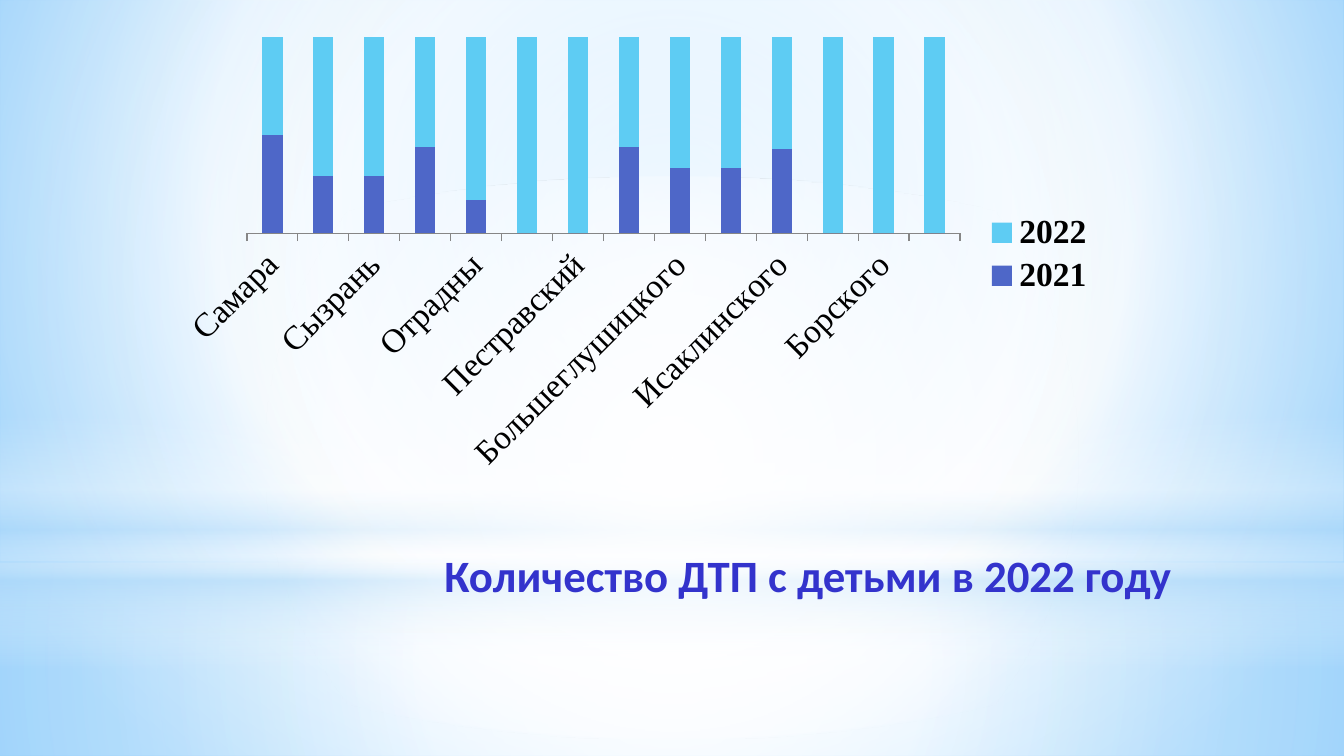
import pptx
import pptx.chart.data
import pptx.dml.color
import pptx.enum.chart
import pptx.enum.shapes
import pptx.enum.text
import pptx.oxml
import pptx.oxml.ns
import pptx.util

Pt = pptx.util.Pt
RGB = pptx.dml.color.RGBColor
SHAPE = pptx.enum.shapes.MSO_SHAPE

WHITE = RGB(0xFF, 0xFF, 0xFF)
SKY = RGB(0x9E, 0xD5, 0xFF)
BRIGHT_SKY = RGB(0x5B, 0xB9, 0xFF)
PALE_BLUE = RGB(0xB4, 0xDC, 0xFA)
BLACK = RGB(0, 0, 0)
TITLE_BLUE = RGB(0x33, 0x33, 0xCC)
AXIS_GRAY = RGB(0x86, 0x86, 0x86)

TITLE = "Количество ДТП с детьми в 2022 году"
DISTRICTS = [
    ("Самара", 50, 50),
    ("Чапаевск", 29, 71),
    ("Сызрань", 29, 71),
    ("Новокуйбышевск", 44, 56),
    ("Отрадны", 17, 83),
    ("Камышлинский", 0, 100),
    ("Пестравский", 0, 100),
    ("Безенчукского", 44, 56),
    ("Большеглушицкого", 33, 67),
    ("Похвистневского", 33, 67),
    ("Исаклинского", 43, 57),
    ("Кошкинского", 0, 100),
    ("Борского", 0, 100),
    ("Шигонского", 0, 100),
]
YEARS = [("2021", RGB(0x4E, 0x67, 0xC8)), ("2022", RGB(0x5E, 0xCC, 0xF3))]

WIDTH, HEIGHT = 720, 405
CENTER = (50, 50, 50, 50)
BACKGROUND = [(0, SKY, 100), (60, WHITE, 100), (100, BRIGHT_SKY, 100)]
GLOWS = [
    (SHAPE.RECTANGLE, 301.5, 103.5, CENTER,
     [(0, WHITE, 91), (37, WHITE, 76), (100, PALE_BLUE, 79)]),
    (SHAPE.RECTANGLE, 0, 301.5, CENTER,
     [(0, WHITE, 89), (48, WHITE, 62), (100, PALE_BLUE, 79)]),
    (SHAPE.RECTANGLE, 222.5, 135.5, None,
     [(0, WHITE, 0), (29, WHITE, 30), (45, PALE_BLUE, 40),
      (55, WHITE, 26), (65, PALE_BLUE, 60), (100, WHITE, 0)]),
    (SHAPE.OVAL, 94.5, 301.5, CENTER, [(0, WHITE, 100), (56, WHITE, 0)]),
]


def paint_gradient(fill, owner, stops, focus):
    fill.solid()
    fill.fore_color.rgb = WHITE
    stops_xml = "".join(
        f'<a:gs pos="{position * 1000}"><a:srgbClr val="{color}">'
        f'<a:alpha val="{opacity * 1000}"/></a:srgbClr></a:gs>'
        for position, color, opacity in stops)
    if focus:
        edges = " ".join(f'{side}="{value * 1000}"' for side, value in zip("ltrb", focus))
        direction = f'<a:path path="circle"><a:fillToRect {edges}/></a:path>'
    else:
        direction = '<a:lin ang="5400000" scaled="0"/>'
    gradient = pptx.oxml.parse_xml(
        f'<a:gradFill {pptx.oxml.ns.nsdecls("a")} rotWithShape="1">'
        f'<a:gsLst>{stops_xml}</a:gsLst>{direction}</a:gradFill>')
    plain = owner.find(".//" + pptx.oxml.ns.qn("a:solidFill"))
    plain.getparent().replace(plain, gradient)


def format_font(font, *, name, size, color, bold=False):
    font.name, font.size, font.bold = name, Pt(size), bold
    font.color.rgb = color


def write_text(frame, text, *, align, indent=0, **font_format):
    frame.word_wrap = True
    frame.auto_size = pptx.enum.text.MSO_AUTO_SIZE.SHAPE_TO_FIT_TEXT
    frame.vertical_anchor = pptx.enum.text.MSO_ANCHOR.TOP
    paragraph = frame.paragraphs[0]
    paragraph.alignment = align
    paragraph.line_spacing = 1.0
    paragraph.space_before = Pt(0)
    properties = paragraph._p.get_or_add_pPr()
    properties.set("marL", str(Pt(indent)))
    properties.set("indent", "0")
    run = paragraph.add_run()
    run.text = text
    format_font(run.font, **font_format)


def add_accident_chart(slide):
    accidents = pptx.chart.data.CategoryChartData()
    accidents.categories = [district[0] for district in DISTRICTS]
    for column, (year, _) in enumerate(YEARS, 1):
        accidents.add_series(year, [district[column] for district in DISTRICTS])
    chart = slide.shapes.add_chart(
        pptx.enum.chart.XL_CHART_TYPE.COLUMN_STACKED_100,
        Pt(90), Pt(15), Pt(504), Pt(242.5), accidents).chart
    chart.has_title = False
    chart_font = dict(name="Times New Roman", size=18, color=BLACK)
    format_font(chart.font, **chart_font)

    columns = chart.plots[0]
    columns.gap_width, columns.overlap = 150, 100
    columns.vary_by_categories = False
    for series, (_, color) in zip(columns.series, YEARS):
        series.format.fill.solid()
        series.format.fill.fore_color.rgb = color

    chart.value_axis.visible = False
    chart.value_axis.has_major_gridlines = False
    districts_axis = chart.category_axis
    districts_axis.major_tick_mark = pptx.enum.chart.XL_TICK_MARK.OUTSIDE
    districts_axis.format.line.color.rgb = AXIS_GRAY

    chart.has_legend = True
    chart.legend.position = pptx.enum.chart.XL_LEGEND_POSITION.RIGHT
    chart.legend.include_in_layout = False
    format_font(chart.legend.font, bold=True, **chart_font)


def main():
    deck = pptx.Presentation()
    deck.slide_width, deck.slide_height = Pt(WIDTH), Pt(HEIGHT)
    slide = deck.slides.add_slide(deck.slide_layouts[5])
    paint_gradient(slide.background.fill, slide.element, BACKGROUND, (20, 10, 20, 60))

    for outline, top, height, focus, stops in GLOWS:
        glow = slide.shapes.add_shape(outline, 0, Pt(top), Pt(WIDTH), Pt(height))
        glow.shadow.inherit = False
        glow.line.fill.background()
        paint_gradient(glow.fill, glow.element, stops, focus)

    add_accident_chart(slide)

    title = slide.shapes.title
    title.left, title.top, title.width, title.height = Pt(173), Pt(290), Pt(516), Pt(36)
    write_text(title.text_frame, TITLE, align=pptx.enum.text.PP_ALIGN.CENTER, indent=3.6,
               name="Calibri", size=24, color=TITLE_BLUE, bold=True)
    title.element.getparent().append(title.element)

    deck.save("out.pptx")


if __name__ == "__main__":
    main()
